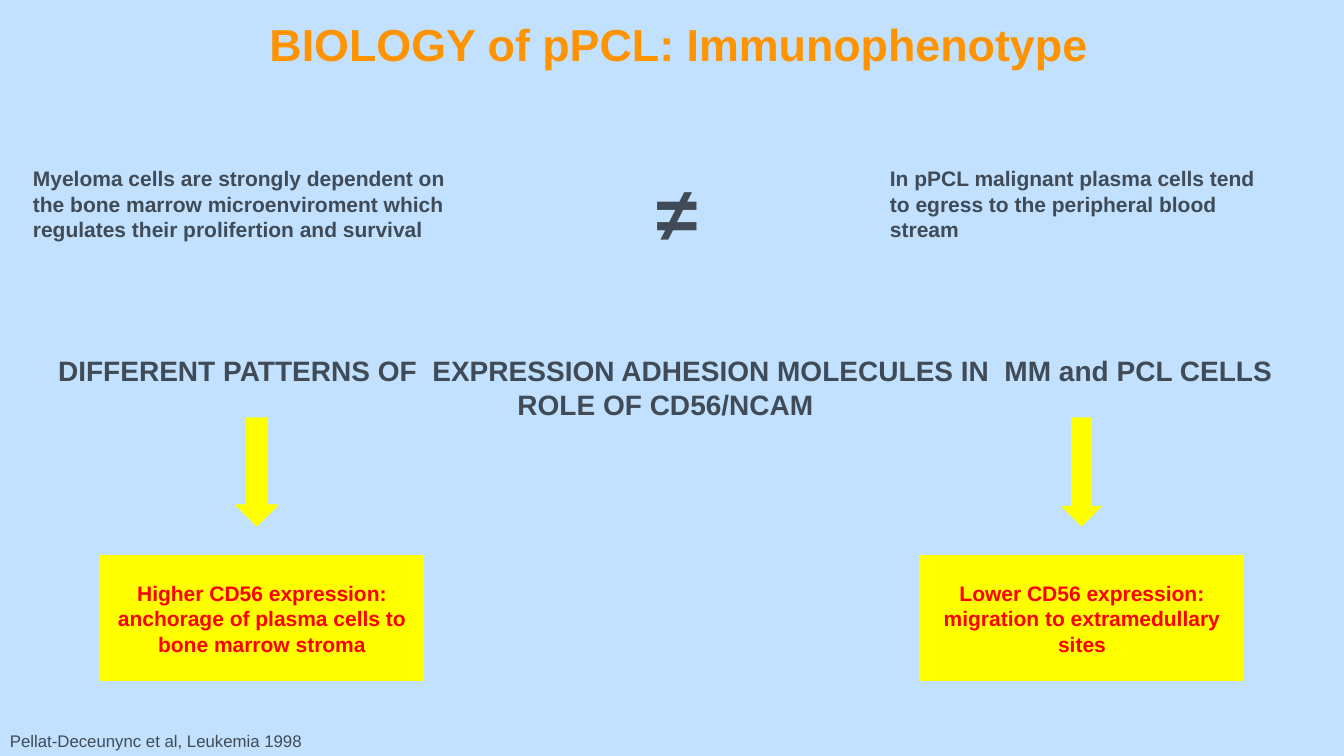
import pptx
import pptx.dml.color
import pptx.enum.shapes
import pptx.enum.text
import pptx.util

SKY = pptx.dml.color.RGBColor(0xC1, 0xE1, 0xFE)
ORANGE = pptx.dml.color.RGBColor(0xFF, 0x93, 0x00)
SLATE = pptx.dml.color.RGBColor(0x40, 0x4B, 0x57)
YELLOW = pptx.dml.color.RGBColor(0xFF, 0xFF, 0x00)
RED = pptx.dml.color.RGBColor(0xFF, 0x00, 0x00)

SCALE = pptx.util.Inches(7.5) / 756
SHAPE = pptx.enum.shapes.MSO_SHAPE
ALIGN = pptx.enum.text.PP_ALIGN
ANCHOR = pptx.enum.text.MSO_ANCHOR


def px(*lengths):
    return [round(length * SCALE) for length in lengths]


def write(frame, *lines, size=15, color=SLATE, bold=True, align=ALIGN.LEFT,
          anchor=ANCHOR.TOP, wrap=True, font="Arial"):
    frame.auto_size = pptx.enum.text.MSO_AUTO_SIZE.NONE
    frame.word_wrap = wrap
    frame.vertical_anchor = anchor
    frame.text = "\n".join(lines)
    for paragraph in frame.paragraphs:
        paragraph.alignment = align
        paragraph.line_spacing = 1.0
        paragraph.space_before = pptx.util.Pt(0)
        paragraph.font.name = font
        paragraph.font.size = pptx.util.Pt(size)
        paragraph.font.bold = bold
        paragraph.font.color.rgb = color


class Page:
    def __init__(self, deck, background, accent):
        self.accent = accent
        self.slide = deck.slides.add_slide(deck.slide_layouts[5])
        self.slide.background.fill.solid()
        self.slide.background.fill.fore_color.rgb = background

    def title(self, place, wording, **style):
        heading = self.slide.shapes.title
        heading.left, heading.top, heading.width, heading.height = px(*place)
        write(heading.text_frame, wording, **style)

    def text(self, place, *lines, **style):
        box = self.slide.shapes.add_textbox(*px(*place))
        write(box.text_frame, *lines, **style)

    def block(self, kind, place):
        block = self.slide.shapes.add_shape(kind, *px(*place))
        block.shadow.inherit = False
        block.fill.solid()
        block.fill.fore_color.rgb = self.accent
        block.line.color.rgb = self.accent
        block.line.width = pptx.util.Pt(0.75)
        return block

    def arrow(self, left, width):
        self.block(SHAPE.DOWN_ARROW, (left, 418, width, 108))

    def finding(self, left, wording):
        finding = self.block(SHAPE.RECTANGLE, (left, 556, 324, 125))
        write(finding.text_frame, wording, color=RED, align=ALIGN.CENTER,
              anchor=ANCHOR.MIDDLE)


def main():
    deck = pptx.Presentation()
    deck.slide_width, deck.slide_height = px(1344, 756)
    page = Page(deck, SKY, YELLOW)

    page.title((0, 12, 1358, 65), "BIOLOGY of pPCL: Immunophenotype",
               size=32, color=ORANGE, align=ALIGN.CENTER)
    page.text((23, 161, 468, 132),
              "Myeloma cells are strongly dependent on the bone marrow "
              "microenviroment which regulates their prolifertion and survival")
    page.text((647, 161, 77, 102), "≠", size=54)
    page.text((880, 161, 403, 102),
              "In pPCL malignant plasma cells tend to egress to the "
              "peripheral blood stream")
    page.text((0, 349, 1331, 109),
              "DIFFERENT PATTERNS OF  EXPRESSION ADHESION MOLECULES IN  "
              "MM and PCL CELLS",
              "ROLE OF CD56/NCAM", size=20, align=ALIGN.CENTER)

    for arrow_left, arrow_width, finding_left, finding in (
        (236, 42, 100, "Higher CD56 expression: anchorage of plasma cells "
                       "to bone marrow stroma"),
        (1062, 39, 920, "Lower CD56 expression: migration to "
                        "extramedullary sites"),
    ):
        page.arrow(arrow_left, arrow_width)
        page.finding(finding_left, finding)

    page.text((0, 726, 321, 30), "Pellat-Deceunync et al, Leukemia 1998",
              size=12, bold=False, wrap=False)
    deck.save("out.pptx")


if __name__ == "__main__":
    main()
